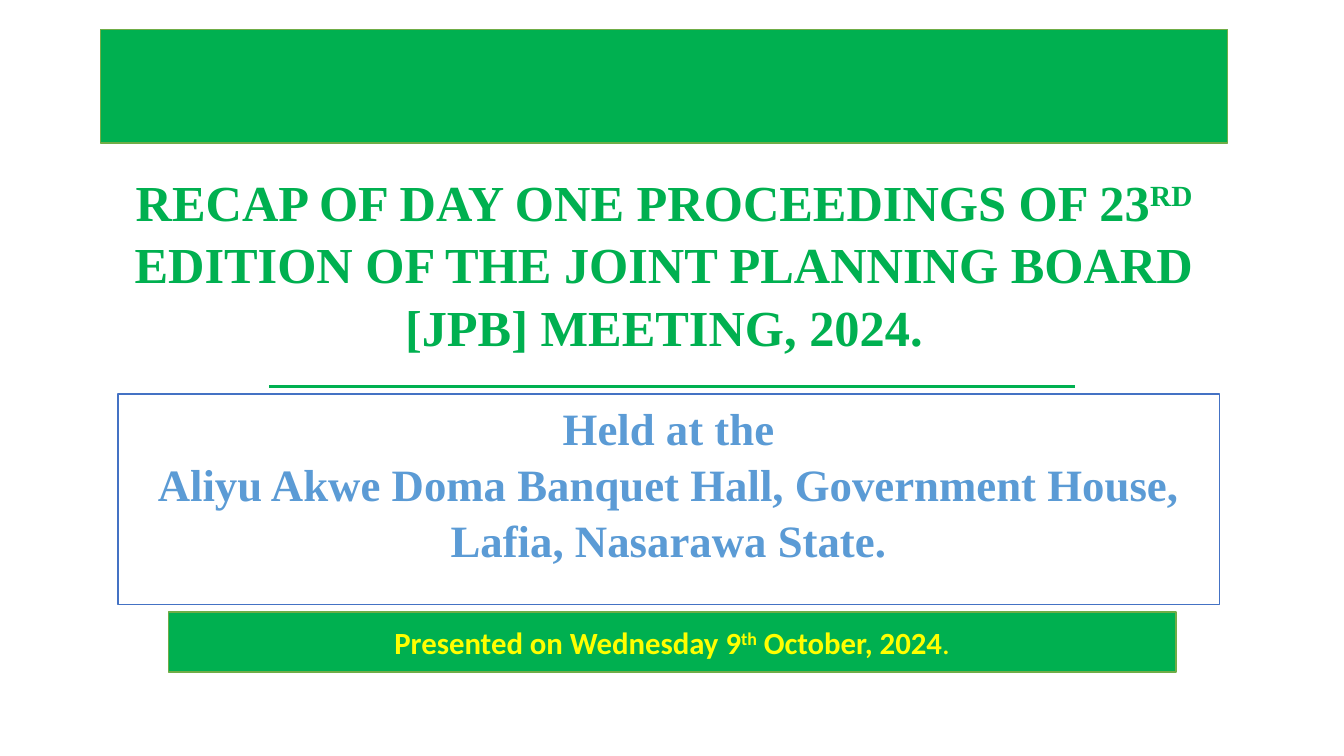
from lxml import etree
from pptx import Presentation
from pptx.dml.color import RGBColor
from pptx.enum import shapes, text
from pptx.oxml.ns import qn
from pptx.util import Cm, Pt

GREEN, LEAF, BLUE, SKY = "00B050", "70AD47", "4472C4", "5B9BD5"
WHITE, YELLOW = "FFFFFF", "FFFF00"
SERIF, SANS = "Times New Roman", "Calibri"

# Each paragraph is a list of (words, style) pairs
TITLE = [[("RECAP OF DAY ONE PROCEEDINGS OF 23", "bold"), ("RD", "super"),
          (" EDITION OF THE JOINT PLANNING BOARD [JPB] MEETING, 2024.", "bold")]]
VENUE = [[("Held at the", "bold")],
         [("Aliyu Akwe Doma Banquet Hall, Government House,", "bold")],
         [("Lafia, Nasarawa State.", "bold")]]
DATE = [[("Presented on Wednesday 9", "bold"), ("th", "super"),
         (" October, 2024", "bold"), (".", "plain")]]

# Left, top, width, height in centimetres
TITLE_AREA = (2.74, 3.91, 27.99, 5.21)
BANNER_AREA = (2.54, 0.74, 28.4, 2.87)
DATE_AREA = (4.24, 15.42, 25.4, 1.52)
VENUE_AREA = (2.97, 9.93, 27.76, 5.31)
RULE = (6.78, 9.73, 27.1, 9.73)


def color(code):
    return RGBColor.from_string(code)


def add_panel(page, area, fill, line):
    panel = page.shapes.add_shape(shapes.MSO_SHAPE.RECTANGLE, *map(Cm, area))
    panel.shadow.inherit = False
    panel.fill.solid()
    panel.fill.fore_color.rgb = color(fill)
    panel.line.color.rgb = color(line)
    panel.line.width = Pt(1)
    return panel


def write(box, paragraphs, size, font, ink, anchor, spacing=1.0):
    frame = box.text_frame
    frame.word_wrap = True
    frame.vertical_anchor = anchor
    for index, pieces in enumerate(paragraphs):
        para = frame.add_paragraph() if index else frame.paragraphs[0]
        para.alignment = text.PP_ALIGN.CENTER
        para.line_spacing = spacing
        for words, style in pieces:
            span = para.add_run()
            span.text = words
            span.font.size = Pt(size)
            span.font.name = font
            span.font.bold = style != "plain"
            span.font.color.rgb = color(ink)
            if style == "super":
                span.font._element.set("baseline", "30000")


deck = Presentation()
deck.slide_width, deck.slide_height = Cm(33.87), Cm(19.05)
page = deck.slides.add_slide(deck.slide_layouts[6])

title = page.shapes.add_textbox(*map(Cm, TITLE_AREA))
write(title, TITLE, 36, SERIF, GREEN, text.MSO_ANCHOR.BOTTOM, 1.04)

add_panel(page, BANNER_AREA, GREEN, LEAF)
date = add_panel(page, DATE_AREA, GREEN, LEAF)
write(date, DATE, 22, SANS, YELLOW, text.MSO_ANCHOR.MIDDLE)
venue = add_panel(page, VENUE_AREA, WHITE, BLUE)
write(venue, VENUE, 32, SERIF, SKY, text.MSO_ANCHOR.TOP, 1.04)

rule = page.shapes.add_connector(shapes.MSO_CONNECTOR.STRAIGHT, *map(Cm, RULE))
rule.line.color.rgb = color(GREEN)
rule.line.width = Pt(2.25)
etree.SubElement(rule._element.spPr, qn("a:effectLst"))

deck.save("out.pptx")
